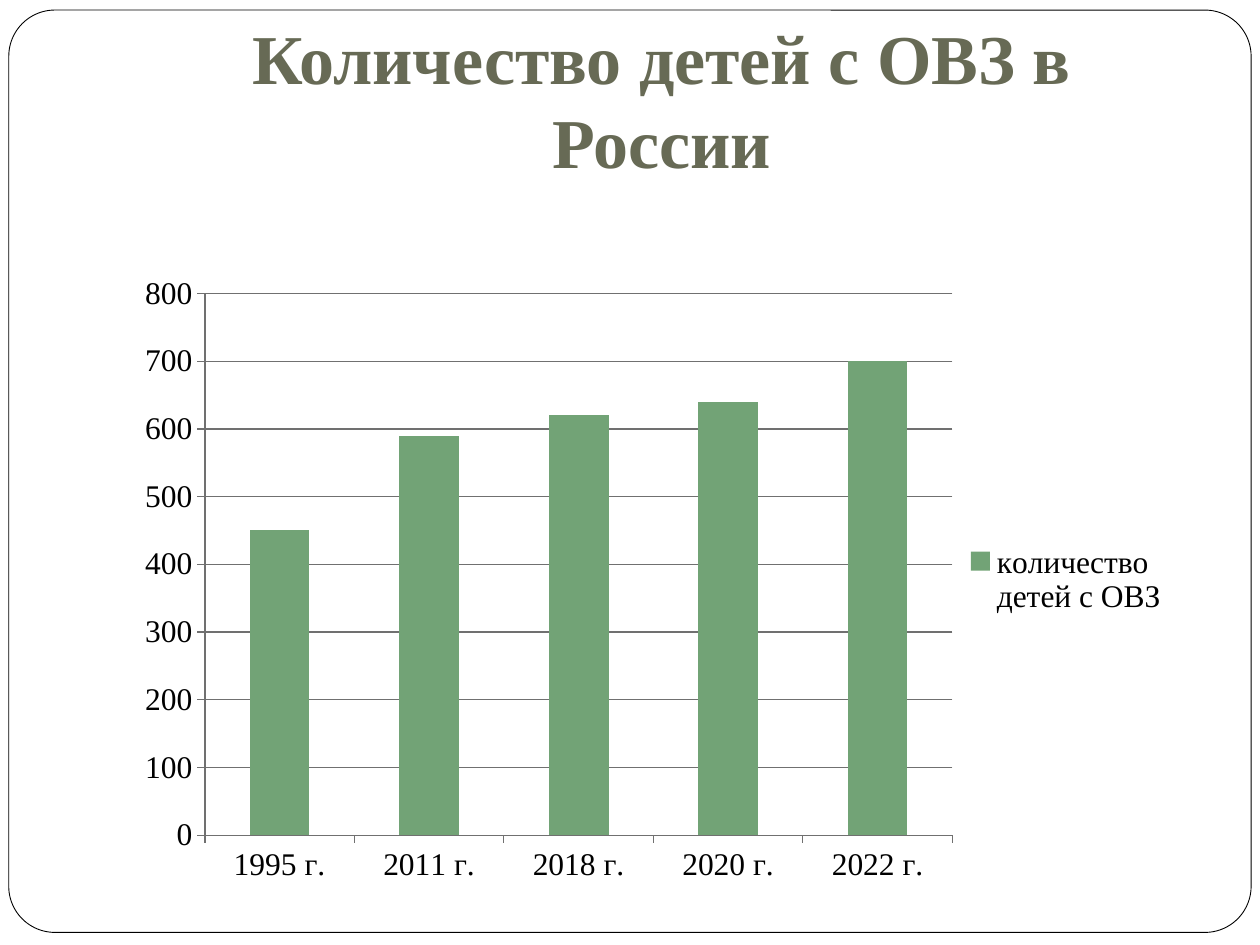
from lxml.etree import SubElement
from pptx import Presentation
from pptx.chart.data import CategoryChartData
from pptx.dml.color import RGBColor
from pptx.enum.chart import XL_CHART_TYPE, XL_LEGEND_POSITION, XL_TICK_MARK
from pptx.enum.shapes import MSO_SHAPE
from pptx.enum.text import MSO_ANCHOR, PP_ALIGN
from pptx.oxml.ns import qn
from pptx.util import Inches, Pt

FONT = "Times New Roman"
CHILDREN_BY_YEAR = {
    "1995 г.": 450,
    "2011 г.": 590,
    "2018 г.": 620,
    "2020 г.": 640,
    "2022 г.": 700,
}


def color(value):
    return RGBColor.from_string(value)


def style_font(font, size, value):
    font.name = FONT
    font.size = Pt(size)
    font.color.rgb = color(value)


def set_layout(element, fractions, inner=False):
    for old in element.findall(qn("c:layout")):
        element.remove(old)
    layout = SubElement(element, qn("c:layout"))
    manual = SubElement(layout, qn("c:manualLayout"))
    settings = {"layoutTarget": "inner"} if inner else {}
    settings.update(xMode="edge", yMode="edge")
    settings.update(zip("xywh", fractions))
    for name, value in settings.items():
        SubElement(manual, qn("c:" + name)).set("val", str(value))
    position = element.find(qn("c:legendPos"))
    if position is None:
        element.insert(0, layout)
    else:
        position.addnext(layout)


def add_frame(page, box):
    frame = page.shapes.add_shape(MSO_SHAPE.ROUNDED_RECTANGLE, *box)
    frame.adjustments[0] = 0.05
    frame.shadow.inherit = False
    frame.fill.solid()
    frame.fill.fore_color.rgb = color("FFFFFF")
    frame.line.color.rgb = color("000000")
    frame.line.width = Pt(0.5)


def add_title(page, box):
    text = page.shapes.add_textbox(*box).text_frame
    text.word_wrap = True
    text.vertical_anchor = MSO_ANCHOR.BOTTOM
    text.margin_bottom = Inches(0.1)
    para = text.paragraphs[0]
    para.alignment = PP_ALIGN.CENTER
    span = para.add_run()
    span.text = "Количество детей с ОВЗ в России"
    style_font(span.font, 40, "676A55")
    span.font.bold = True


def add_children_chart(page, box):
    data = CategoryChartData()
    data.categories = list(CHILDREN_BY_YEAR)
    data.add_series("количество детей с ОВЗ", list(CHILDREN_BY_YEAR.values()))
    chart = page.shapes.add_chart(XL_CHART_TYPE.COLUMN_CLUSTERED, *box, data).chart
    style_font(chart.font, 18, "000000")
    chart.has_title = False
    chart.has_legend = True
    chart.legend.position = XL_LEGEND_POSITION.RIGHT
    chart.legend.include_in_layout = False

    plot = chart.plots[0]
    plot.vary_by_categories = False
    plot.gap_width = 150
    bars = plot.series[0].format.fill
    bars.solid()
    bars.fore_color.rgb = color("72A376")

    values = chart.value_axis
    values.minimum_scale = 0
    values.maximum_scale = 800
    values.major_unit = 100
    values.has_major_gridlines = True
    for axis in (chart.category_axis, values):
        axis.major_tick_mark = XL_TICK_MARK.OUTSIDE
        axis.minor_tick_mark = XL_TICK_MARK.NONE
    for part in (chart.category_axis, values, values.major_gridlines):
        part.format.line.color.rgb = color("707070")
        part.format.line.width = Pt(0.75)

    root = chart.element
    set_layout(root.find(".//" + qn("c:plotArea")), (0.076, 0.046, 0.698, 0.86), True)
    set_layout(root.find(".//" + qn("c:legend")), (0.78, 0.445, 0.2, 0.11))


def main():
    deck = Presentation()
    deck.slide_width = Inches(10)
    deck.slide_height = Inches(7.5)
    page = deck.slides.add_slide(deck.slide_layouts[6])
    add_frame(page, (Inches(0.07), Inches(0.08), Inches(9.86), Inches(7.32)))
    add_title(page, (Inches(1), Inches(0.3), Inches(8.5), Inches(1.25)))
    add_children_chart(page, (Inches(0.98), Inches(2.1), Inches(8.5), Inches(5)))
    deck.save("out.pptx")


if __name__ == "__main__":
    main()
